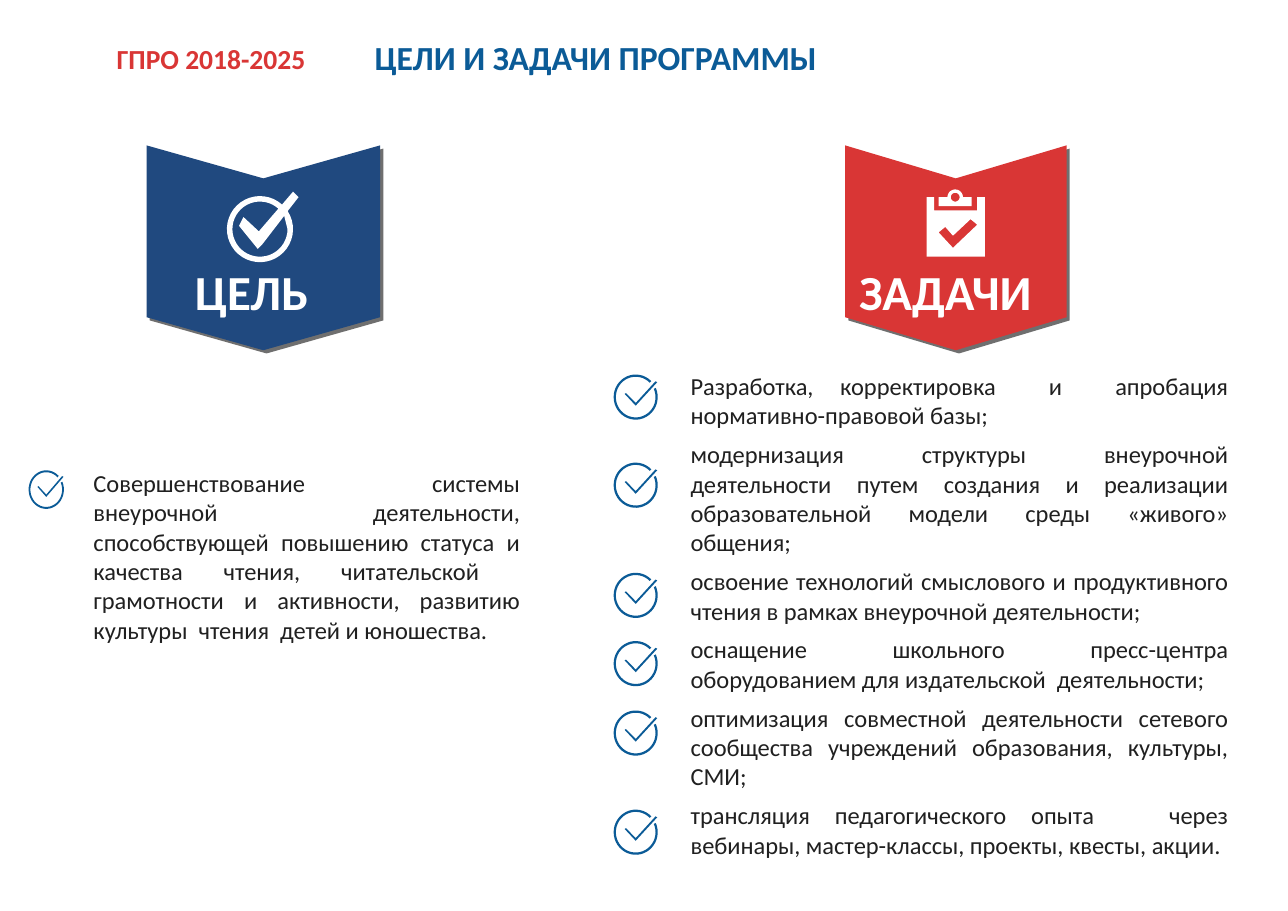
from math import cos, radians, sin

from lxml import etree
from pptx import Presentation
from pptx.dml.color import RGBColor
from pptx.enum.text import MSO_ANCHOR, PP_ALIGN
from pptx.oxml.ns import qn
from pptx.util import Inches, Pt

LEFT, JUSTIFY = PP_ALIGN.LEFT, PP_ALIGN.JUSTIFY
MIDDLE = MSO_ANCHOR.MIDDLE
BLUE = RGBColor(0x0B, 0x5B, 0x97)
NAVY = RGBColor(0x20, 0x49, 0x7F)
RED = RGBColor(0xD9, 0x36, 0x35)
WHITE = RGBColor(0xFF, 0xFF, 0xFF)
DARK = RGBColor(0x20, 0x20, 0x20)
SHADOW = "3F3F3F"
FONT = "Calibri"

# Content
PROGRAM = "ГПРО 2018-2025"
TITLE = "ЦЕЛИ И ЗАДАЧИ ПРОГРАММЫ"
GOALS = [
    "Совершенствование системы внеурочной деятельности, способствующей "
    "повышению статуса и качества чтения, читательской  грамотности  и  "
    "активности,  развитию культуры  чтения  детей и юношества.",
]
TASKS = [
    "Разработка, корректировка  и  апробация нормативно-правовой базы;",
    "модернизация  структуры  внеурочной деятельности путем создания и "
    "реализации образовательной модели среды «живого» общения;",
    "освоение технологий смыслового и продуктивного чтения в рамках "
    "внеурочной деятельности;",
    "оснащение школьного пресс-центра оборудованием для издательской  "
    "деятельности;",
    "оптимизация совместной деятельности сетевого сообщества учреждений "
    "образования, культуры, СМИ;",
    "трансляция педагогического опыта   через вебинары, мастер-классы, "
    "проекты, квесты, акции.",
]
# Banner: label, left, right, colour, label left, label width
BANNERS = [
    ("ЦЕЛЬ", 1.33, 3.45, NAVY, 1.67, 1.31),
    ("ЗАДАЧИ", 7.67, 9.68, RED, 7.70, 1.94),
]
# Column: items, text box, left of marks, tops of marks, size of marks
COLUMNS = [
    (GOALS, (0.70, 4.20, 4.12, 2.91), 0.26, [4.27], (0.32, 0.35)),
    (TASKS, (6.12, 3.32, 5.13, 3.47), 5.57,
     [3.40, 4.20, 5.20, 5.82, 6.45, 7.35], (0.40, 0.41)),
]

deck = Presentation()
deck.slide_width, deck.slide_height = Inches(11.69), Inches(8.27)
page = deck.slides.add_slide(deck.slide_layouts[5])


def arc(center, radius, start, end, steps=40):
    """Points on a circle; angles in degrees, clockwise from the right."""
    angles = [radians(start + (end - start) * i / steps)
              for i in range(steps + 1)]
    return [(center[0] + radius * cos(a), center[1] + radius * sin(a))
            for a in angles]


def draw(outlines, color):
    """One filled shape; inner outlines become holes."""
    outlines = [[(Inches(x), Inches(y)) for x, y in line] for line in outlines]
    builder = page.shapes.build_freeform(*outlines[0][0])
    for number, points in enumerate(outlines):
        if number:
            builder.move_to(*points[0])
        builder.add_line_segments(points[1:], close=True)
    shape = builder.convert_to_shape()
    shape.shadow.inherit = False
    shape.fill.solid()
    shape.fill.fore_color.rgb = color
    shape.line.fill.background()
    return shape


def style(para, size, color, bold=False, align=LEFT):
    para.alignment = align
    for span in para.runs:
        span.font.name, span.font.size = FONT, Pt(size)
        span.font.bold, span.font.color.rgb = bold, color


def add_box(place, lines, size, color, bold=False, align=LEFT, wrap=False):
    box = page.shapes.add_textbox(*map(Inches, place))
    frame = box.text_frame
    frame.word_wrap = wrap
    frame.text = "\n".join(lines)
    for para in frame.paragraphs:
        style(para, size, color, bold, align)
    return frame


def add_shadow(shape):
    effects = shape._element.spPr.find(qn("a:effectLst"))
    outer = etree.SubElement(effects, qn("a:outerShdw"), blurRad="0",
                             dist=str(Pt(3)), dir="2700000", algn="tl")
    color = etree.SubElement(outer, qn("a:srgbClr"), val=SHADOW)
    etree.SubElement(color, qn("a:alpha"), val="75000")


def add_mark(left, top, width, height):
    """Open ring with a thin tick, on a unit square."""
    middle = (0.5, 0.5)
    ring = arc(middle, 0.5, -24, 315) + arc(middle, 0.45, 315, -24)
    tick = [(0.28, 0.41), (0.50, 0.63), (0.95, 0.15),
            (0.99, 0.17), (0.50, 0.69), (0.25, 0.43)]
    draw([[(left + x * width, top + y * height) for x, y in line]
          for line in (ring, tick)], BLUE)


# Header
add_box((0.96, 0.33, 1.92, 0.40), [PROGRAM], 18, RED, bold=True)
title = page.shapes.title
title.left, title.top = Inches(3.30), Inches(0.12)
title.width, title.height = Inches(6.38), Inches(0.79)
title.text_frame.text = TITLE
title.text_frame.vertical_anchor = MIDDLE
style(title.text_frame.paragraphs[0], 22, BLUE, bold=True)

# Banners with labels
for label, left, right, color, label_left, label_width in BANNERS:
    center = (left + right) / 2
    add_shadow(draw([[(left, 1.32), (center, 1.62), (right, 1.32),
                      (right, 2.88), (center, 3.18), (left, 2.88)]], color))
    add_box((label_left, 2.33, label_width, 0.64), [label], 32, WHITE,
            bold=True)

# Goal icon: ring crossed by a bold tick
hub = (2.36, 2.08)
draw([
    [(2.71, 1.79), (2.66, 1.74)] + arc(hub, 0.30, -48, -393),
    arc(hub, 0.25, 0, 312) + [(2.35, 2.10), (2.21, 1.97), (2.17, 2.05),
                              (2.34, 2.26), (2.38, 2.22), (2.58, 1.96)],
], WHITE)

# Tasks icon: clipboard sheet and its clip
draw([
    [(8.41, 1.79), (8.48, 1.79), (8.48, 1.91), (8.87, 1.91),
     (8.87, 1.79), (8.94, 1.79), (8.94, 2.33), (8.41, 2.33)],
    [(8.65, 2.25), (8.52, 2.11), (8.58, 2.06), (8.65, 2.14),
     (8.81, 1.99), (8.87, 2.04)],
], WHITE)
pivot = (8.67, 1.79)
draw([
    [(8.52, 1.79)] + arc(pivot, 0.07, 180, 360)
    + [(8.82, 1.79), (8.82, 1.87), (8.52, 1.87)],
    arc(pivot, 0.04, 360, 0),
], WHITE)

# Text columns with check marks
for items, place, mark_left, mark_tops, mark_size in COLUMNS:
    frame = add_box(place, items, 16, DARK, align=JUSTIFY, wrap=True)
    for number, para in enumerate(frame.paragraphs):
        para._p.get_or_add_pPr().set("marL", str(Inches(0.05)))
        para.space_before = Pt(3.2 if number else 0)
        para.space_after = Pt(3)
    for top in mark_tops:
        add_mark(mark_left, top, *mark_size)

deck.save("out.pptx")
